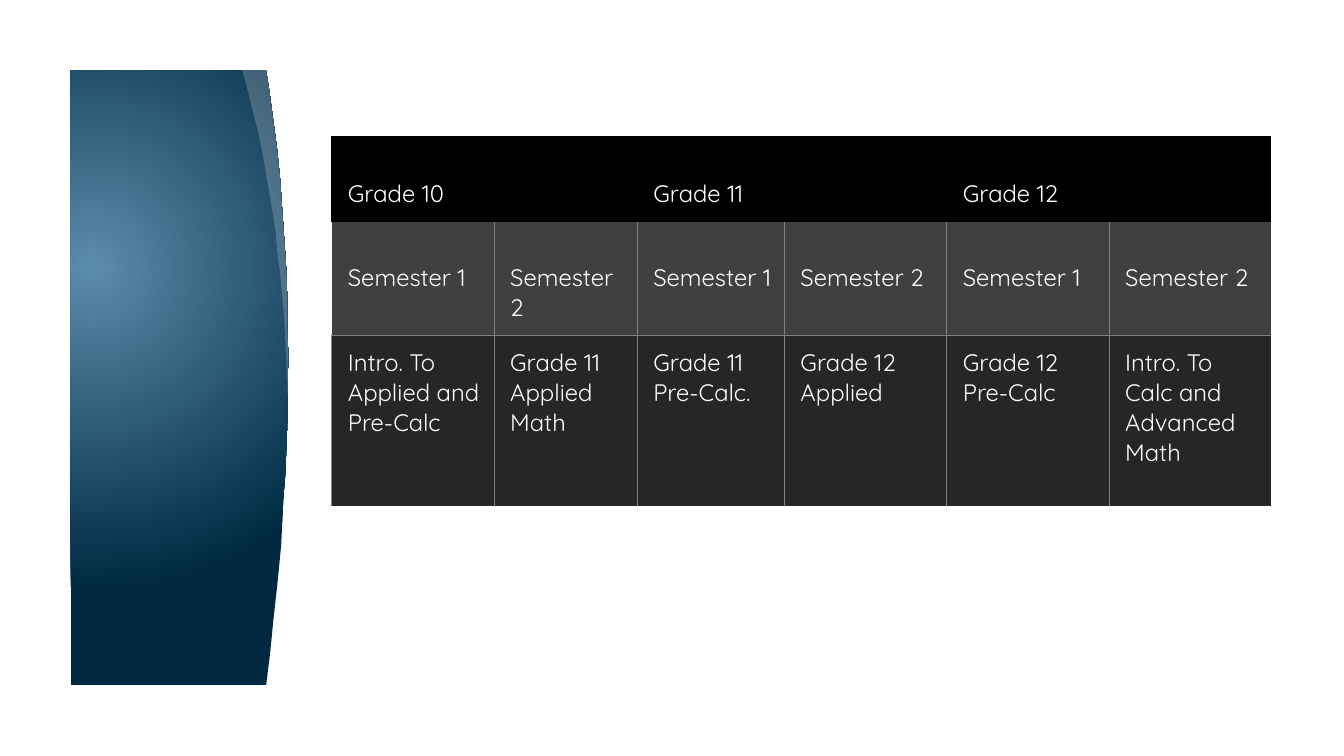
from dataclasses import dataclass

from lxml import etree
from pptx import Presentation
from pptx import util as u
from pptx.dml.color import RGBColor
from pptx.enum import text
from pptx.oxml import ns

Point = tuple[float, float]


@dataclass(frozen=True)
class Theme:
    font: str = "Quicksand"
    size: float = 17
    ink: str = "FFFFFF"
    header: str = "000000"
    semester: str = "404040"
    course: str = "262626"
    rule: str = "808080"
    glow: str = "5A8CAB"
    deep: str = "002841"
    gloss: str = "FFFFFF"


@dataclass(frozen=True)
class Border:
    side: str
    color: str
    width: float


@dataclass(frozen=True)
class CourseRow:
    height: float
    fill: str
    top: float
    labels: tuple[str, ...]
    sides: str = ""


T = Theme()
NO_STYLE = "{2D5ABB26-0587-4C30-8999-92F81FD0307C}"
COLUMNS = (1.61, 1.42, 1.46, 1.61, 1.61, 1.61)
ROWS = (
    CourseRow(0.84, T.header, 0.41, ("Grade 10", "", "Grade 11", "", "Grade 12", "")),
    CourseRow(1.13, T.semester, 0.41, ("Semester 1", "Semester 2") * 3, "LRB"),
    CourseRow(1.69, T.course, 0.12, (
        "Intro. To Applied and Pre-Calc", "Grade 11 Applied Math",
        "Grade 11 Pre-Calc.", "Grade 12 Applied", "Grade 12 Pre-Calc",
        "Intro. To Calc and Advanced Math"), "LRT"),
)

PANEL_LEFT, PANEL_TOP, PANEL_BOTTOM = 0.7, 0.7, 6.8
UPPER_EDGE: list[Point] = [
    (2.64, 0.7), (2.67, 0.89), (2.71, 1.19), (2.75, 1.49), (2.78, 1.79),
    (2.8, 2.09), (2.82, 2.38), (2.84, 2.68), (2.85, 2.97), (2.85, 3.25),
    (2.86, 3.53), (2.85, 3.94)]
LOWER_EDGE: list[Point] = [
    (2.85, 4.2), (2.84, 4.46), (2.83, 4.71), (2.81, 4.95), (2.8, 5.18),
    (2.79, 5.4), (2.77, 5.61), (2.75, 5.81), (2.73, 5.99), (2.71, 6.17),
    (2.68, 6.48), (2.64, PANEL_BOTTOM)]
GLOSS_EDGE: list[Point] = [
    (2.84, 3.6), (2.83, 3.39), (2.82, 3.18), (2.8, 2.95), (2.78, 2.73),
    (2.75, 2.5), (2.73, 2.27), (2.69, 2.03), (2.65, 1.79), (2.61, 1.55),
    (2.56, 1.31), (2.5, 1.07), (2.44, 0.83), (2.37, 0.59), (2.34, 0.47)]


def add_outline(s, points: list[Point]):
    start, *rest = [(u.Inches(x), u.Inches(y)) for x, y in points]
    builder = s.shapes.build_freeform(*start)
    builder.add_line_segments(rest, close=True)
    sp = builder.convert_to_shape()
    sp.shadow.inherit = False
    sp.line.fill.background()
    return sp


def add_panel(s) -> None:
    corners = [(PANEL_LEFT, PANEL_BOTTOM), (PANEL_LEFT, PANEL_TOP)]
    sp = add_outline(s, UPPER_EDGE + LOWER_EDGE + corners)
    sp.fill.gradient()
    for stop, color in zip(sp.fill.gradient_stops, (T.glow, T.deep)):
        stop.color.rgb = RGBColor.from_string(color)
    grad = sp._element.spPr.find(ns.qn("a:gradFill"))
    grad.remove(grad.find(ns.qn("a:lin")))
    circle = etree.SubElement(grad, ns.qn("a:path"), path="circle")
    etree.SubElement(circle, ns.qn("a:fillToRect"),
                     l="45000", t="65000", r="125000", b="100000")


def add_gloss(s) -> None:
    sp = add_outline(s, [(3.01, 0.44), (3.03, 0.7)] + UPPER_EDGE + GLOSS_EDGE)
    sp.fill.solid()
    sp.fill.fore_color.rgb = RGBColor.from_string(T.gloss)
    color = sp._element.spPr.find(".//" + ns.qn("a:srgbClr"))
    etree.SubElement(color, ns.qn("a:alpha"), val="20000")


def set_borders(cell, borders: list[Border]) -> None:
    tc_pr = cell._tc.get_or_add_tcPr()
    ordered = sorted(borders, key=lambda b: "LRTB".index(b.side))
    for i, b in enumerate(ordered):
        ln = etree.Element(ns.qn(f"a:ln{b.side}"), w=str(u.Pt(b.width)))
        fill = etree.SubElement(ln, ns.qn("a:solidFill"))
        etree.SubElement(fill, ns.qn("a:srgbClr"), val=b.color)
        tc_pr.insert(i, ln)


def write(tf, words: str, *, size: float = T.size, color: str = T.ink,
          font: str = T.font) -> None:
    p = tf.paragraphs[0]
    p.font.size = u.Pt(size)
    if words:
        r = p.add_run()
        r.text = words
        r.font.name = font
        r.font.size = u.Pt(size)
        r.font.color.rgb = RGBColor.from_string(color)


def cell_borders(row: int, col: int) -> list[Border]:
    if row == 0:
        sides = "LT" if col == 0 else "T"
        return [Border(side, T.header, 1.5) for side in sides]
    outer = {"L": col == 0 and row == 1, "R": col == len(COLUMNS) - 1}
    return [Border(side, T.rule, 0.5) for side in ROWS[row].sides
            if not outer.get(side)]


def add_courses(s) -> None:
    frame = s.shapes.add_table(
        len(ROWS), len(COLUMNS), u.Inches(3.29), u.Inches(1.36),
        u.Inches(sum(COLUMNS)), u.Inches(sum(row.height for row in ROWS)))
    table = frame.table
    table.first_row = table.horz_banding = False
    table._tbl.tblPr.find(ns.qn("a:tableStyleId")).text = NO_STYLE
    for col, width in enumerate(COLUMNS):
        table.columns[col].width = u.Inches(width)
    for i, row in enumerate(ROWS):
        table.rows[i].height = u.Inches(row.height)
        for j, label in enumerate(row.labels):
            cell = table.cell(i, j)
            cell.margin_left = u.Inches(0.16)
            cell.margin_right = cell.margin_bottom = u.Inches(0.12)
            cell.margin_top = u.Inches(row.top)
            cell.vertical_anchor = text.MSO_ANCHOR.TOP
            cell.fill.solid()
            cell.fill.fore_color.rgb = RGBColor.from_string(row.fill)
            set_borders(cell, cell_borders(i, j))
            write(cell.text_frame, label)


def main() -> None:
    prs = Presentation()
    prs.slide_width, prs.slide_height = u.Inches(13.33), u.Inches(7.5)
    s = prs.slides.add_slide(prs.slide_layouts[6])
    add_panel(s)
    add_gloss(s)
    add_courses(s)
    prs.save("out.pptx")


if __name__ == "__main__":
    main()
